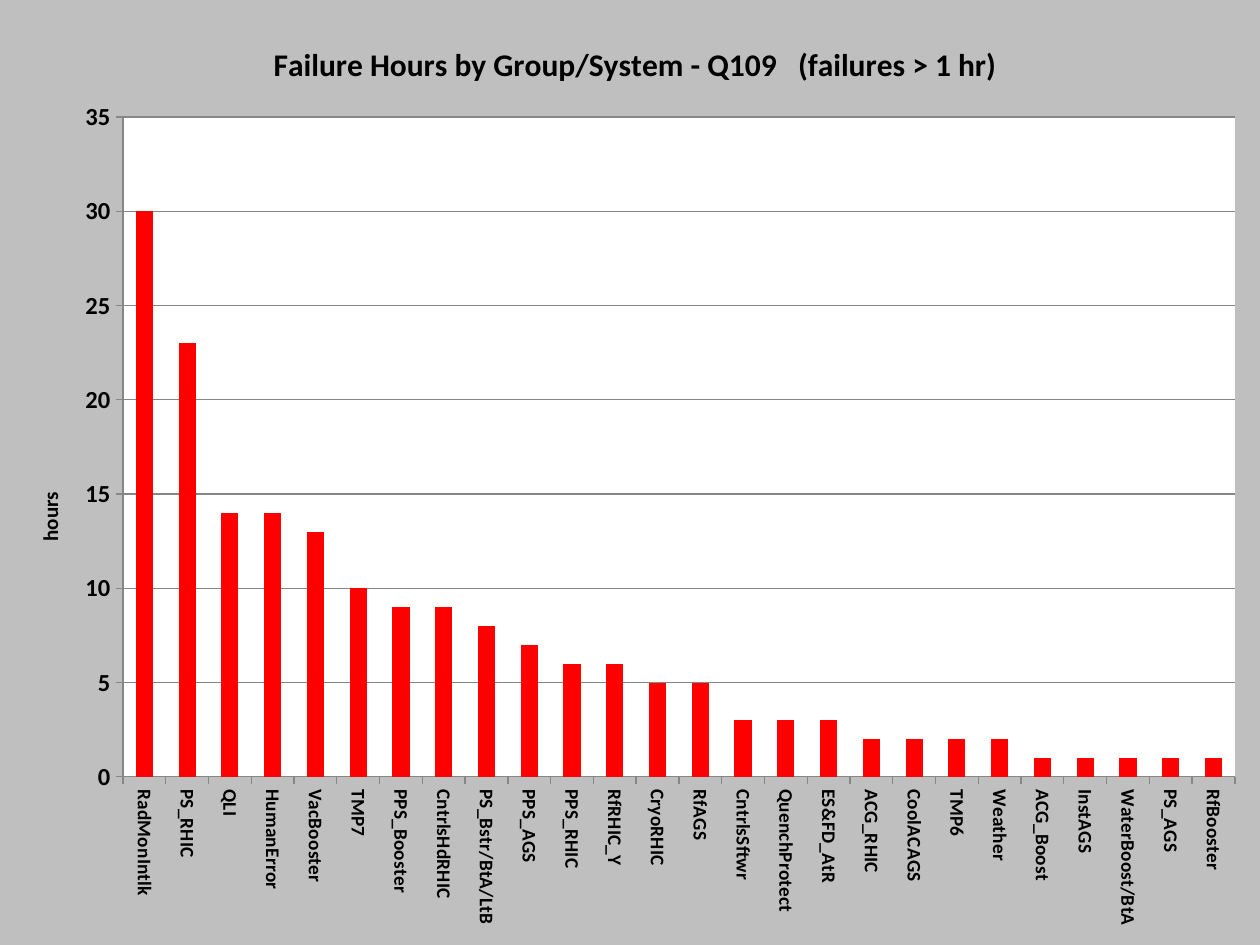
from lxml import etree
from pptx import Presentation, util as u
from pptx.chart.data import CategoryChartData
from pptx.dml.color import RGBColor
from pptx.enum import chart as ch
from pptx.oxml import ns

PX = 914400 // 126
W, H = 1260, 945
THEME = dict(font="Calibri", ink="000000", back="BFBFBF", plot="FFFFFF",
             bar="FF0000", grid="868686", title=18, value=14, hours=12, group=11, base=10)
FAILURES = [
    ("RadMonIntlk", 30), ("PS_RHIC", 23), ("QLI", 14), ("HumanError", 14),
    ("VacBooster", 13), ("TMP7", 10), ("PPS_Booster", 9), ("CntrlsHdRHIC", 9),
    ("PS_Bstr/BtA/LtB", 8), ("PPS_AGS", 7), ("PPS_RHIC", 6), ("RfRHIC_Y", 6),
    ("CryoRHIC", 5), ("RfAGS", 5), ("CntrlsSftwr", 3), ("QuenchProtect", 3),
    ("ES&FD_AtR", 3), ("ACG_RHIC", 2), ("CoolACAGS", 2), ("TMP6", 2),
    ("Weather", 2), ("ACG_Boost", 1), ("InstAGS", 1), ("WaterBoost/BtA", 1),
    ("PS_AGS", 1), ("RfBooster", 1),
]


def set_font(font, size):
    font.name, font.size, font.bold = THEME["font"], u.Pt(THEME[size]), size != "base"
    font.color.rgb = RGBColor.from_string(THEME["ink"])


def set_layout(parent, index, x, y, w=None, h=None):
    for old in parent.findall(ns.qn("c:layout")):
        parent.remove(old)
    layout = etree.Element(ns.qn("c:layout"))
    manual = etree.SubElement(layout, ns.qn("c:manualLayout"))
    items = [("xMode", "edge"), ("yMode", "edge"), ("x", x / W), ("y", y / H)]
    if w:
        items = [("layoutTarget", "inner")] + items + [("w", w / W), ("h", h / H)]
    for tag, val in items:
        etree.SubElement(manual, ns.qn("c:" + tag)).set("val", str(val))
    parent.insert(index, layout)


prs = Presentation()
prs.slide_width, prs.slide_height = W * PX, H * PX
s = prs.slides.add_slide(prs.slide_layouts[6])

data = CategoryChartData(number_format="0")
data.categories = [group for group, hours in FAILURES]
data.add_series("Series 1", [hours for group, hours in FAILURES])
chart = s.shapes.add_chart(ch.XL_CHART_TYPE.COLUMN_CLUSTERED, 0, 0, W * PX, H * PX, data).chart
set_font(chart.font, "base")
chart.has_legend = False

plot = chart.plots[0]
plot.gap_width = 150
plot.vary_by_categories = False
fill = plot.series[0].format.fill
fill.solid()
fill.fore_color.rgb = RGBColor.from_string(THEME["bar"])

cat, val = chart.category_axis, chart.value_axis
val.minimum_scale, val.maximum_scale, val.major_unit = 0, 35, 5
val.has_major_gridlines = True
val.tick_labels.number_format = "0"
val.tick_labels.number_format_is_linked = False
for axis, size in ((cat, "group"), (val, "value")):
    axis.major_tick_mark = ch.XL_TICK_MARK.OUTSIDE
    set_font(axis.tick_labels.font, size)
for line in (cat.format.line, val.format.line, val.major_gridlines.format.line):
    line.color.rgb = RGBColor.from_string(THEME["grid"])
    line.width = u.Pt(0.75)
body = cat._element.find(ns.qn("c:txPr")).find(ns.qn("a:bodyPr"))
body.set("rot", "5400000")
body.set("vert", "horz")

for owner, title, size, x, y in (
        (chart, "Failure Hours by Group/System - Q109   (failures > 1 hr)", "title", 268, 37),
        (val, "hours", "hours", 32, 488)):
    owner.has_title = True
    box = owner.chart_title if owner is chart else owner.axis_title
    tf = box.text_frame
    p = tf.paragraphs[0]
    p.text = title
    set_font(p.font, size)
    set_layout(box._element, 1, x, y)
body = val.axis_title.text_frame._txBody.find(ns.qn("a:bodyPr"))
body.set("rot", "-5400000")
body.set("vert", "horz")

root = chart._chartSpace.find(ns.qn("c:chart"))
area = root.find(ns.qn("c:plotArea"))
set_layout(area, 0, 123, 117, 1112, 660)
for place, color in ((root.addnext, "back"), (area.append, "plot")):
    sp = etree.Element(ns.qn("c:spPr"))
    solid = etree.SubElement(sp, ns.qn("a:solidFill"))
    etree.SubElement(solid, ns.qn("a:srgbClr")).set("val", THEME[color])
    ln = etree.SubElement(sp, ns.qn("a:ln"))
    etree.SubElement(ln, ns.qn("a:noFill"))
    place(sp)

prs.save("out.pptx")
